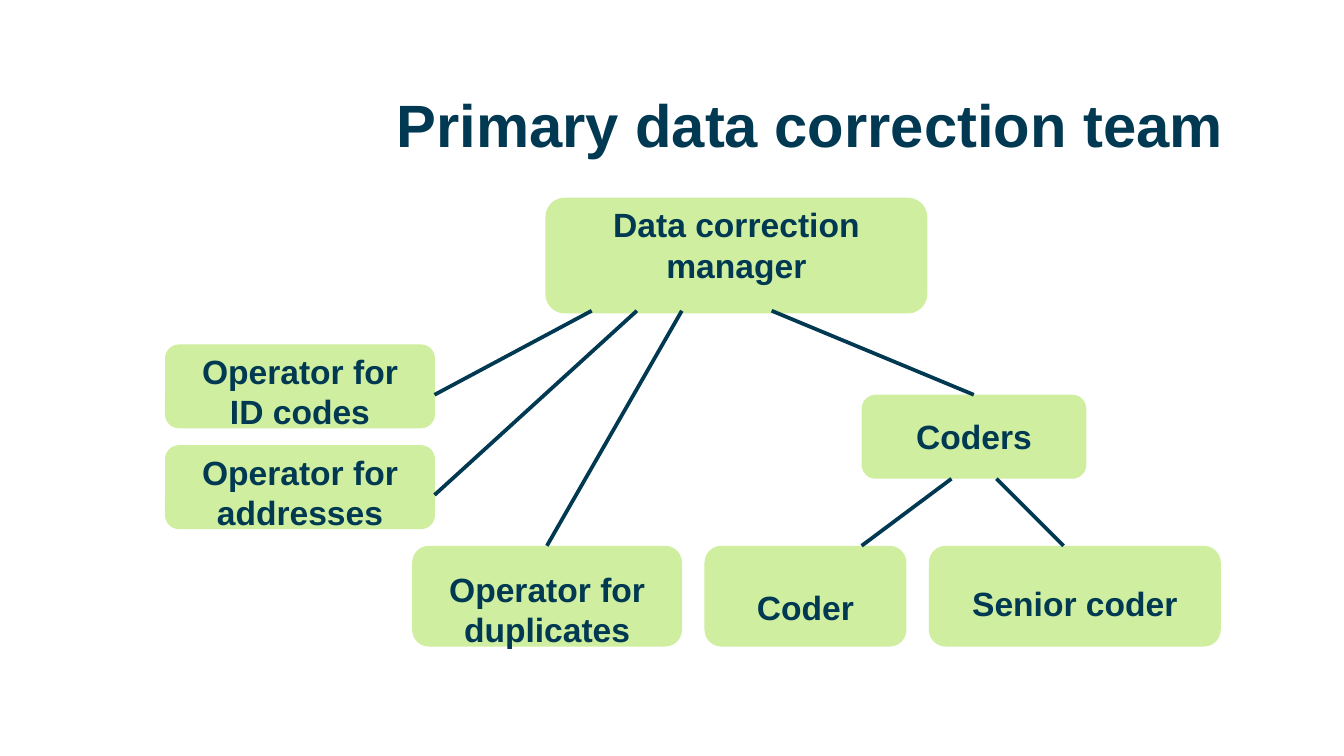
"""Build the organisation chart of the primary data correction team."""
from dataclasses import dataclass

from lxml.etree import SubElement
from pptx import Presentation
from pptx.dml.color import RGBColor
from pptx.enum.shapes import MSO_CONNECTOR as Connector, MSO_SHAPE as Shape
from pptx.enum.text import MSO_ANCHOR as Anchor, MSO_AUTO_SIZE as AutoSize, PP_ALIGN as Align
from pptx.oxml.ns import qn
from pptx.util import Pt


@dataclass(frozen=True)
class Theme:
    font: str = "Arial"
    ink: RGBColor = RGBColor(0x00, 0x39, 0x51)
    box: RGBColor = RGBColor(0xCF, 0xEE, 0xA0)
    title_size: int = 32
    label_size: int = 18
    line_width: int = 2


theme = Theme()
LABEL_INSET = 12


def write_text(frame, text, size, alignment, anchor):
    frame.word_wrap = True
    frame.auto_size = AutoSize.NONE
    frame.vertical_anchor = anchor
    paragraph = frame.paragraphs[0]
    paragraph.alignment = alignment
    run = paragraph.add_run()
    run.text = text
    run.font.name = theme.font
    run.font.size = Pt(size)
    run.font.bold = True
    run.font.color.rgb = theme.ink


presentation = Presentation()
presentation.slide_width = Pt(720)
presentation.slide_height = Pt(405)
slide = presentation.slides.add_slide(presentation.slide_layouts[5])

title = slide.shapes.title
title.left, title.top, title.width, title.height = Pt(212.4), Pt(32.4), Pt(476.6), Pt(67.7)
frame = title.text_frame
frame.margin_left = frame.margin_top = frame.margin_right = frame.margin_bottom = 0
write_text(frame, "Primary data correction team", theme.title_size, Align.LEFT, Anchor.MIDDLE)

roles = [
    ("Data correction manager", 292.2, 105.9, 204.6, 62, 0, 79),
    ("Operator for ID codes", 88.4, 184.5, 144.6, 45, 0, 42),
    ("Operator for addresses", 88.4, 238.5, 144.6, 45, 0, 36),
    ("Coders", 461.6, 211.5, 120.4, 45, 8, 45),
    ("Coder", 377.4, 292.4, 108.2, 54, 18.5, 45),
    ("Senior coder", 497.6, 292.4, 156.4, 54, 16.5, 45),
    ("Operator for duplicates", 220.8, 292.4, 144.6, 54, 8.8, 45),
]
for role, left, top, width, height, label_drop, label_height in roles:
    box = slide.shapes.add_shape(
        Shape.FLOWCHART_ALTERNATE_PROCESS, Pt(left), Pt(top), Pt(width), Pt(height)
    )
    box.shadow.inherit = False
    box.fill.solid()
    box.fill.fore_color.rgb = theme.box
    box.line.fill.background()
    label = slide.shapes.add_textbox(
        Pt(left + LABEL_INSET), Pt(top + label_drop),
        Pt(width - 2 * LABEL_INSET), Pt(label_height),
    )
    write_text(label.text_frame, role, theme.label_size, Align.CENTER, Anchor.TOP)

manager_exit = 166.5
coders_exit = 256.5
links = [
    (365.3, manager_exit, 293, 292.4),
    (413.4, manager_exit, 521.7, 211.5),
    (341.2, manager_exit, 232.8, 265.2),
    (317, manager_exit, 232.8, 211.5),
    (533.8, coders_exit, 569.8, 292.4),
    (509.7, coders_exit, 461.6, 292.4),
]
for link in links:
    connector = slide.shapes.add_connector(Connector.STRAIGHT, *map(Pt, link))
    connector.line.color.rgb = theme.ink
    connector.line.width = Pt(theme.line_width)
    SubElement(connector.element.spPr, qn("a:effectLst"))

presentation.save("out.pptx")
